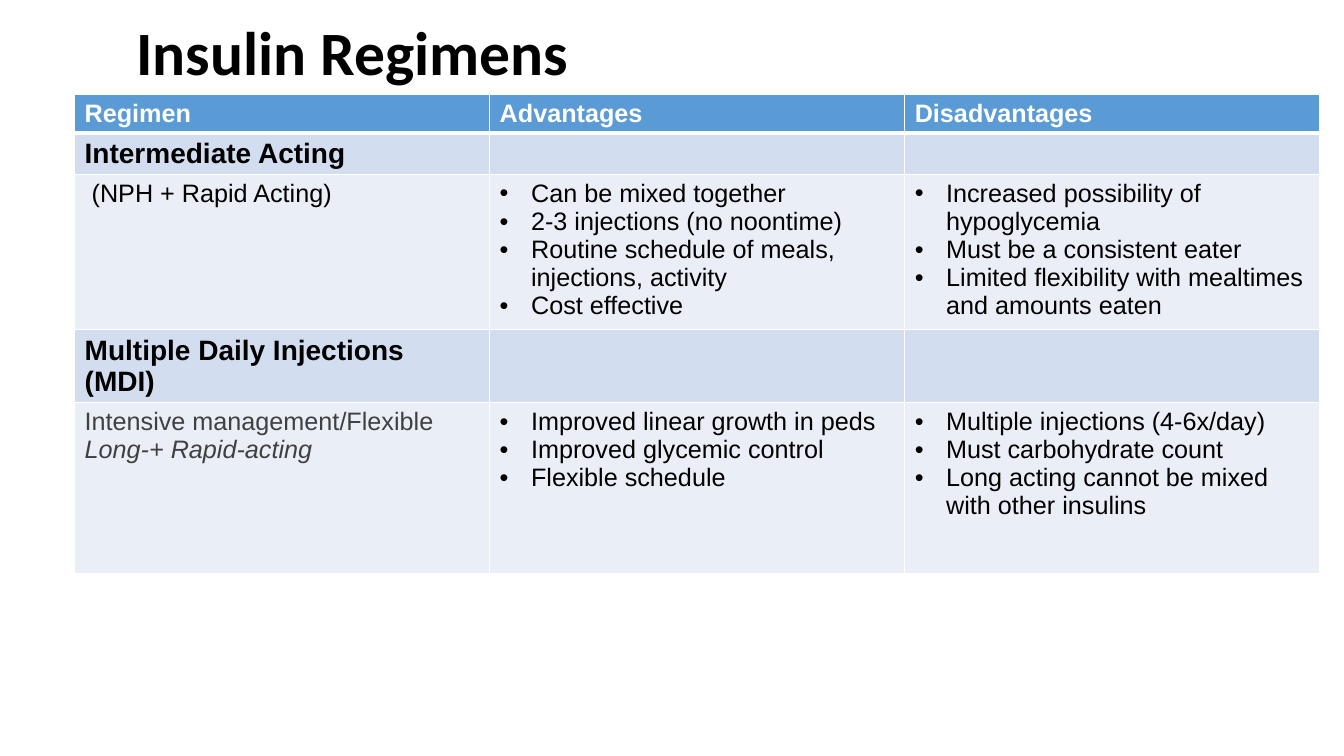
"""Build the Insulin Regimens slide with its comparison table."""
from lxml.etree import SubElement
from pptx import Presentation
from pptx.dml.color import RGBColor
from pptx.enum.text import MSO_ANCHOR, MSO_AUTO_SIZE, PP_ALIGN
from pptx.oxml.ns import qn
from pptx.util import Cm, Pt

TITLE = "Insulin Regimens"
HEADINGS = ["Regimen", "Advantages", "Disadvantages"]
REGIMENS = [
    {
        "name": "Intermediate Acting",
        "details": [" (NPH + Rapid Acting)"],
        "advantages": [
            "Can be mixed together",
            "2-3 injections (no noontime)",
            "Routine schedule of meals, injections, activity",
            "Cost effective",
        ],
        "disadvantages": [
            "Increased possibility of hypoglycemia",
            "Must be a consistent eater",
            "Limited flexibility with mealtimes and amounts eaten",
        ],
        "color": "000000",
    },
    {
        "name": "Multiple Daily Injections (MDI)",
        "details": ["Intensive management/Flexible", "Long-+ Rapid-acting"],
        "advantages": [
            "Improved linear growth in peds",
            "Improved glycemic control",
            "Flexible schedule",
        ],
        "disadvantages": [
            "Multiple injections (4-6x/day)",
            "Must carbohydrate count",
            "Long acting cannot be mixed with other insulins",
        ],
        "color": "404040",
    },
]
ROW_HEIGHTS = [0.95, 1.0, 3.92, 1.73, 4.31]
COLUMN_WIDTH = 10.46
HEADER_FILL, NAME_FILL, DETAIL_FILL = "5B9BD5", "D2DEEF", "EAEFF7"


def rgb(value):
    """Turn a hex string into a colour."""
    return RGBColor.from_string(value)


def style_runs(para, size, color="000000", bold=False, italic=False, font="Arial"):
    """Format every run of a paragraph."""
    for span in para.runs:
        span.font.name = font
        span.font.size = Pt(size)
        span.font.bold = bold
        span.font.italic = italic
        span.font.color.rgb = rgb(color)


def add_bullet(para):
    """Give a paragraph a hanging bullet."""
    properties = para._p.get_or_add_pPr()
    properties.set("marL", str(Cm(0.79)))
    properties.set("indent", str(-Cm(0.79)))
    SubElement(properties, qn("a:buFont"), typeface="Arial")
    SubElement(properties, qn("a:buChar"), char="•")


def paint_cell(cell, fill, bottom=1):
    """Set white borders and a solid fill."""
    properties = cell._tc.get_or_add_tcPr()
    for side, width in (("L", 1), ("R", 1), ("T", 1), ("B", bottom)):
        line = SubElement(properties, qn("a:ln" + side), w=str(Pt(width)))
        solid = SubElement(line, qn("a:solidFill"))
        SubElement(solid, qn("a:srgbClr"), val="FFFFFF")
    cell.fill.solid()
    cell.fill.fore_color.rgb = rgb(fill)


def add_title(page):
    """Place and format the title."""
    title = page.shapes.title
    title.left, title.top, title.width, title.height = Cm(3.18), Cm(0), Cm(29.06), Cm(2.36)
    frame = title.text_frame
    frame.text = TITLE
    frame.word_wrap = True
    frame.auto_size = MSO_AUTO_SIZE.NONE
    frame.vertical_anchor = MSO_ANCHOR.BOTTOM
    para = frame.paragraphs[0]
    para.alignment = PP_ALIGN.LEFT
    para.line_spacing = 0.9
    style_runs(para, 44, bold=True, font="Calibri")


def fill_details(table, row, regimen):
    """Write the description and the two bulleted lists of a regimen."""
    for column, key in enumerate(("details", "advantages", "disadvantages")):
        frame = table.cell(row, column).text_frame
        frame.text = "\n".join(regimen[key])
        for number, para in enumerate(frame.paragraphs):
            if column:
                add_bullet(para)
                style_runs(para, 18)
            else:
                style_runs(para, 18, regimen["color"], italic=number > 0)


def add_regimen_table(page):
    """Add the table of regimens."""
    frame = page.shapes.add_table(
        len(ROW_HEIGHTS), len(HEADINGS), Cm(1.88), Cm(2.38),
        Cm(COLUMN_WIDTH * len(HEADINGS)), Cm(sum(ROW_HEIGHTS)))
    table = frame.table
    for column in table.columns:
        column.width = Cm(COLUMN_WIDTH)
    fills = [HEADER_FILL] + [NAME_FILL, DETAIL_FILL] * len(REGIMENS)
    for index, (height, fill) in enumerate(zip(ROW_HEIGHTS, fills)):
        table.rows[index].height = Cm(height)
        for cell in table.rows[index].cells:
            paint_cell(cell, fill, bottom=1 if index else 3)
    for column, heading in enumerate(HEADINGS):
        cell = table.cell(0, column)
        cell.text_frame.text = heading
        style_runs(cell.text_frame.paragraphs[0], 18, "FFFFFF", bold=True)
    for number, regimen in enumerate(REGIMENS):
        name_row = 1 + 2 * number
        cell = table.cell(name_row, 0)
        cell.text_frame.text = regimen["name"]
        style_runs(cell.text_frame.paragraphs[0], 20, bold=True)
        fill_details(table, name_row + 1, regimen)


def main():
    """Build and save the deck."""
    deck = Presentation()
    deck.slide_width, deck.slide_height = Cm(33.87), Cm(19.05)
    page = deck.slides.add_slide(deck.slide_layouts[5])
    add_title(page)
    add_regimen_table(page)
    deck.save("out.pptx")


if __name__ == "__main__":
    main()
